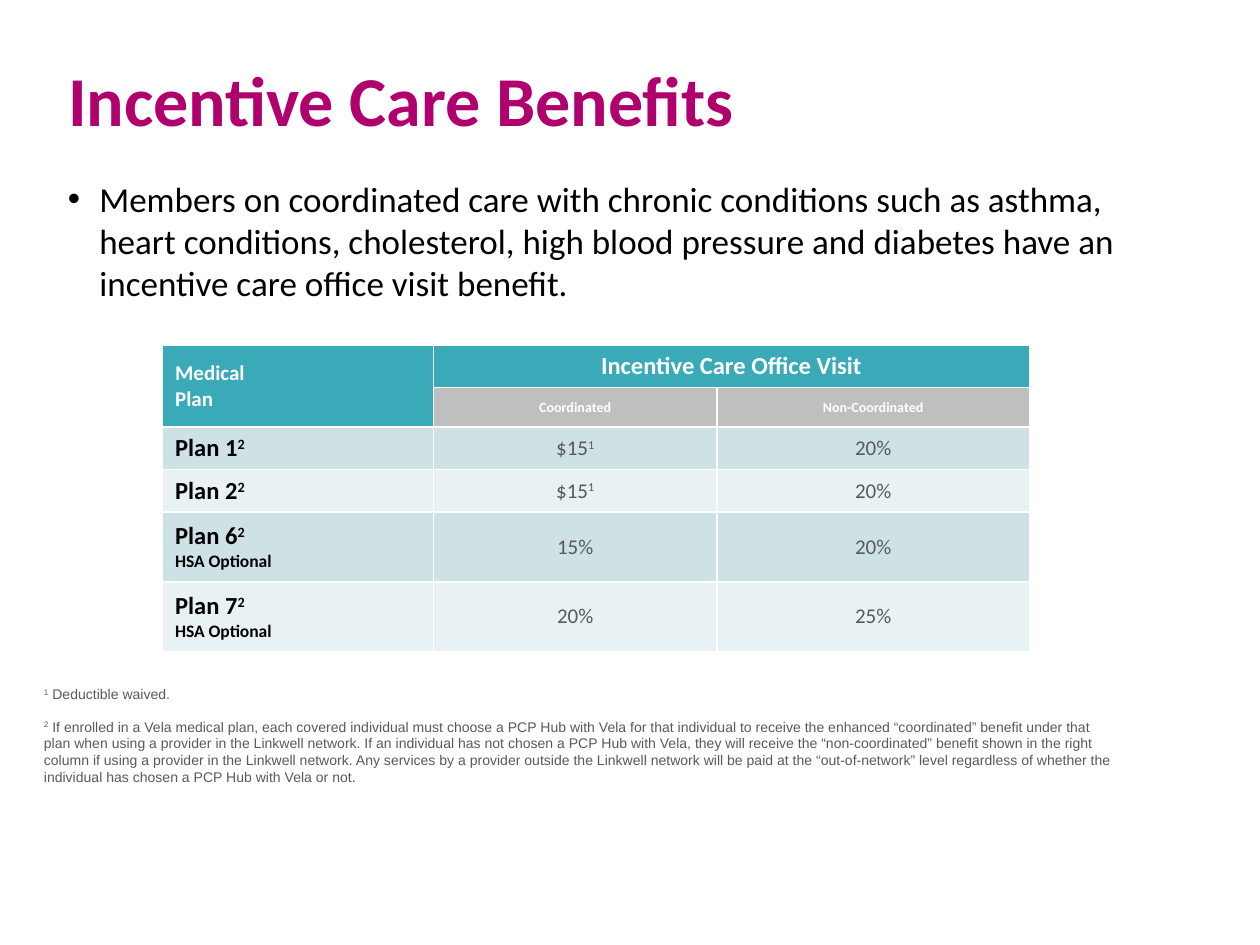
from dataclasses import dataclass

from lxml import etree
from pptx import Presentation
from pptx.dml.color import RGBColor
from pptx.enum.text import MSO_ANCHOR, PP_ALIGN
from pptx.oxml.ns import qn
from pptx.util import Pt

LEFT, CENTER = PP_ALIGN.LEFT, PP_ALIGN.CENTER
TOP, MIDDLE = MSO_ANCHOR.TOP, MSO_ANCHOR.MIDDLE
TITLE_ONLY = 5


@dataclass(frozen=True)
class Theme:
    font: str = "Calibri"
    note_font: str = "Arial"
    accent: str = "B0006D"
    header: str = "3AA9B8"
    subheader: str = "BFBFBF"
    bands: tuple = ("CEE2E6", "E8F1F3")
    black: str = "000000"
    white: str = "FFFFFF"
    grey: str = "595959"
    title_size: float = 40
    body_size: float = 20
    plan_size: float = 14
    cell_size: float = 12
    option_size: float = 10
    small_size: float = 8


THEME = Theme()
COLUMN_WIDTHS = (154.8, 162, 178.6)
ROW_HEIGHTS = (20.2, 24, 22.8, 24.3, 24.3, 39.8, 39.8)
PLANS = (
    ("Plan 1", "", "$15", "1", "20%"),
    ("Plan 2", "", "$15", "1", "20%"),
    ("Plan 6", "HSA Optional", "15%", "", "20%"),
    ("Plan 7", "HSA Optional", "20%", "", "25%"),
)
BODY = (
    "Members on coordinated care with chronic conditions such as asthma, heart conditions, "
    "cholesterol, high blood pressure and diabetes have an incentive care office visit benefit."
)
NETWORK_NOTE = (
    " If enrolled in a Vela medical plan, each covered individual must choose a PCP Hub with "
    "Vela for that individual to receive the enhanced “coordinated” benefit under that plan when "
    "using a provider in the Linkwell network. If an individual has not chosen a PCP Hub with "
    "Vela, they will receive the “non-coordinated” benefit shown in the right column if using a "
    "provider in the Linkwell network. Any services by a provider outside the Linkwell network "
    "will be paid at the “out-of-network” level regardless of whether the individual has chosen "
    "a PCP Hub with Vela or not."
)


def add_run(paragraph, text, size, color, bold=False, font=THEME.font, superscript=False):
    run = paragraph.add_run()
    run.text = text
    run.font.name = font
    run.font.size = Pt(size)
    run.font.bold = bold
    run.font.color.rgb = RGBColor.from_string(color)
    if superscript:
        run._r.get_or_add_rPr().set("baseline", "30000")


def add_text_box(slide, left, top, width, height):
    frame = slide.shapes.add_textbox(Pt(left), Pt(top), Pt(width), Pt(height)).text_frame
    frame.word_wrap = True
    return frame


def add_title(slide, text):
    title = slide.shapes.title
    title.left, title.top, title.width, title.height = Pt(31.7), Pt(28.8), Pt(652.3), Pt(55.4)
    title.text_frame.vertical_anchor = TOP
    paragraph = title.text_frame.paragraphs[0]
    paragraph.alignment = LEFT
    add_run(paragraph, text, THEME.title_size, THEME.accent, bold=True)


def add_body(slide):
    paragraph = add_text_box(slide, 31.7, 97.9, 634.3, 317.2).paragraphs[0]
    properties = paragraph._p.get_or_add_pPr()
    properties.set("marL", str(Pt(18)))
    properties.set("indent", str(Pt(-18)))
    etree.SubElement(properties, qn("a:buFont"), typeface="Arial")
    etree.SubElement(properties, qn("a:buChar"), char="•")
    add_run(paragraph, BODY, THEME.body_size, THEME.black)


def set_borders(cell):
    properties = cell._tc.get_or_add_tcPr()
    for side in ("a:lnL", "a:lnR", "a:lnT", "a:lnB"):
        line = etree.SubElement(properties, qn(side), w=str(Pt(1)))
        fill = etree.SubElement(line, qn("a:solidFill"))
        etree.SubElement(fill, qn("a:srgbClr"), val=THEME.white)


def start_cell(cell, fill, alignment=CENTER):
    cell.fill.solid()
    cell.fill.fore_color.rgb = RGBColor.from_string(fill)
    cell.vertical_anchor = MIDDLE
    paragraph = cell.text_frame.paragraphs[0]
    paragraph.alignment = alignment
    return paragraph


def fill_headers(table):
    table.cell(0, 0).merge(table.cell(0, 2))
    table.cell(1, 0).merge(table.cell(2, 0))
    table.cell(1, 1).merge(table.cell(1, 2))
    spacer = table.cell(0, 0)
    spacer.fill.background()
    etree.SubElement(spacer.text_frame.paragraphs[0]._p, qn("a:endParaRPr"), sz="1000")

    plan_cell = table.cell(1, 0)
    paragraph = start_cell(plan_cell, THEME.header, LEFT)
    add_run(paragraph, "Medical", THEME.cell_size, THEME.white, bold=True)
    add_run(plan_cell.text_frame.add_paragraph(), "Plan", THEME.cell_size, THEME.white, bold=True)

    headers = (
        (1, 1, "Incentive Care Office Visit", THEME.plan_size, THEME.header),
        (2, 1, "Coordinated", THEME.small_size, THEME.subheader),
        (2, 2, "Non-Coordinated", THEME.small_size, THEME.subheader),
    )
    for row, column, text, size, fill in headers:
        paragraph = start_cell(table.cell(row, column), fill)
        add_run(paragraph, text, size, THEME.white, bold=True)


def fill_plan(table, row, plan, fill):
    name, option, coordinated, mark, non_coordinated = plan
    name_cell = table.cell(row, 0)
    paragraph = start_cell(name_cell, fill, LEFT)
    add_run(paragraph, name, THEME.plan_size, THEME.black, bold=True)
    add_run(paragraph, "2", THEME.plan_size, THEME.black, bold=True, superscript=True)
    if option:
        paragraph = name_cell.text_frame.add_paragraph()
        add_run(paragraph, option, THEME.option_size, THEME.black, bold=True)

    paragraph = start_cell(table.cell(row, 1), fill)
    add_run(paragraph, coordinated, THEME.cell_size, THEME.grey)
    if mark:
        add_run(paragraph, mark, THEME.cell_size, THEME.grey, superscript=True)
    paragraph = start_cell(table.cell(row, 2), fill)
    add_run(paragraph, non_coordinated, THEME.cell_size, THEME.grey)


def add_benefit_table(slide):
    table = slide.shapes.add_table(
        len(ROW_HEIGHTS), len(COLUMN_WIDTHS), Pt(92.9), Pt(177.1),
        Pt(sum(COLUMN_WIDTHS)), Pt(sum(ROW_HEIGHTS)),
    ).table
    for column, width in zip(table.columns, COLUMN_WIDTHS):
        column.width = Pt(width)
    for row, height in zip(table.rows, ROW_HEIGHTS):
        row.height = Pt(height)
    for cell in table.iter_cells():
        set_borders(cell)
    fill_headers(table)
    for index, plan in enumerate(PLANS):
        fill_plan(table, index + 3, plan, THEME.bands[index % 2])


def add_footnotes(slide):
    frame = add_text_box(slide, 18, 388.1, 630, 65.5)
    notes = (("1", " Deductible waived."), ("2", NETWORK_NOTE))
    for index, (mark, text) in enumerate(notes):
        paragraph = frame.add_paragraph() if index else frame.paragraphs[0]
        if index:
            paragraph.space_before = Pt(9.2)
        for part, raised in ((mark, True), (text, False)):
            add_run(paragraph, part, THEME.small_size, THEME.grey,
                    font=THEME.note_font, superscript=raised)


def main():
    presentation = Presentation()
    presentation.slide_width, presentation.slide_height = Pt(720), Pt(540)
    slide = presentation.slides.add_slide(presentation.slide_layouts[TITLE_ONLY])
    add_body(slide)
    add_title(slide, "Incentive Care Benefits")
    add_benefit_table(slide)
    add_footnotes(slide)
    presentation.save("out.pptx")


if __name__ == "__main__":
    main()
